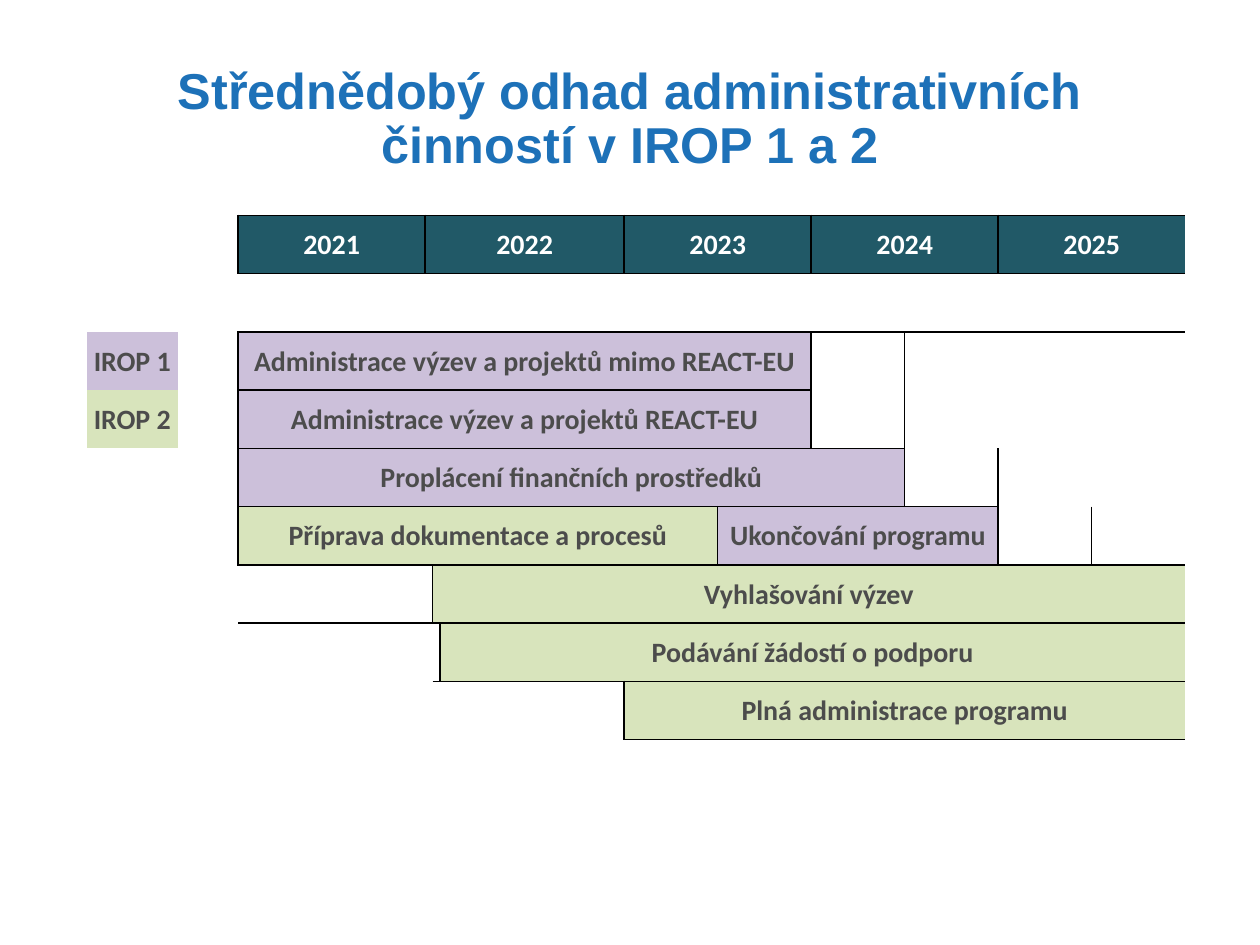
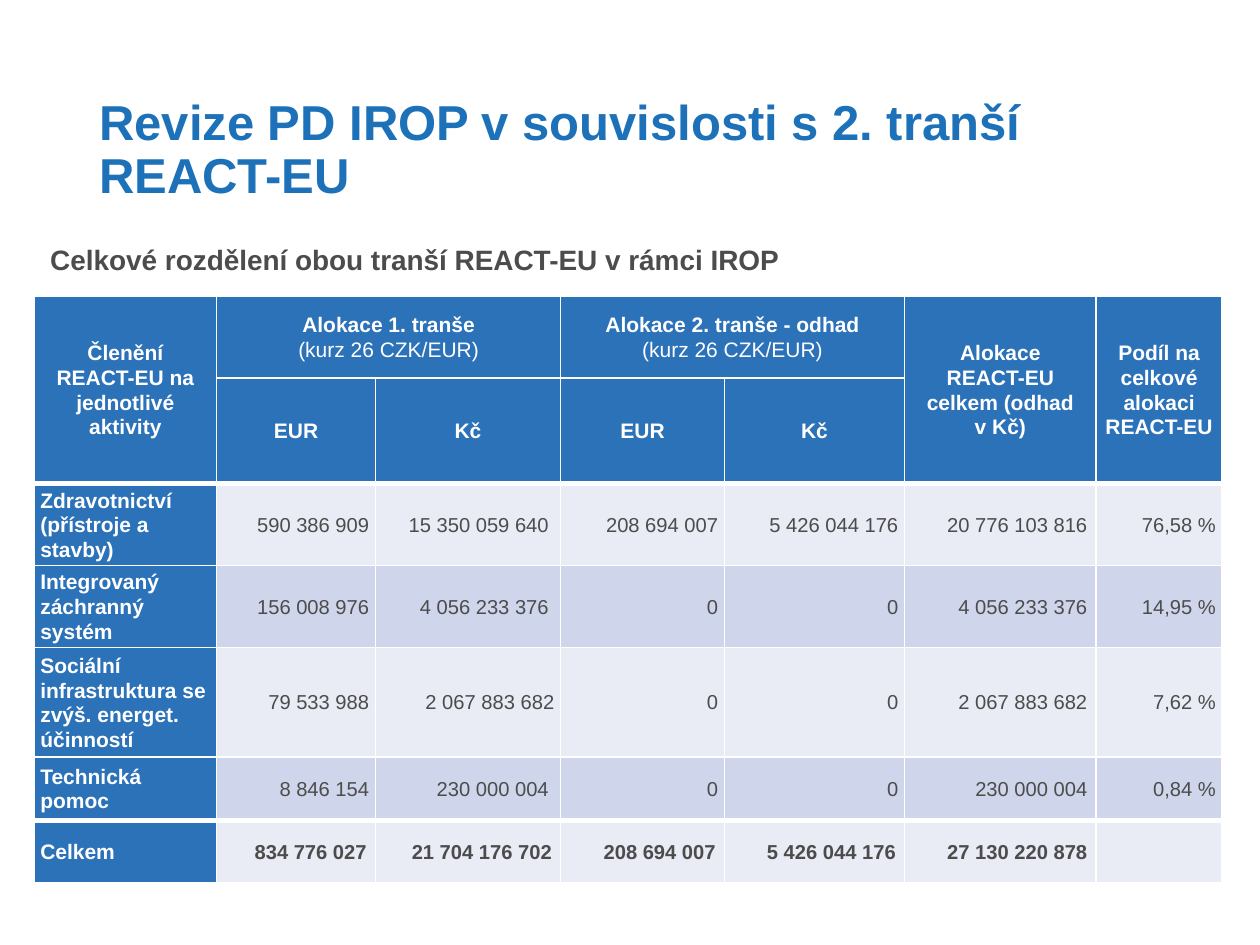
import pptx
import pptx.dml.color
import pptx.enum.text
import pptx.oxml
import pptx.oxml.ns
import pptx.util
from pptx.util import Inches

RGB = pptx.dml.color.RGBColor
ALIGN = pptx.enum.text.PP_ALIGN
MIDDLE = pptx.enum.text.MSO_ANCHOR.MIDDLE

TITLE_BLUE = RGB(0x1D, 0x71, 0xB8)
HEADER_BLUE = RGB(0x2C, 0x72, 0xB9)
TEAL = RGB(0x21, 0x59, 0x67)
PURPLE = RGB(0xCC, 0xC0, 0xDA)
GREEN = RGB(0xD8, 0xE4, 0xBC)
BAND_LIGHT = RGB(0xE9, 0xEB, 0xF5)
BAND_DARK = RGB(0xCF, 0xD5, 0xEA)
GREY = RGB(0x4C, 0x4C, 0x4C)
WHITE = RGB(0xFF, 0xFF, 0xFF)
BLACK = RGB(0x00, 0x00, 0x00)

NO_STYLE = "{2D5ABB26-0587-4C30-8999-92F81FD0307C}"
SIDES = ["L", "R", "T", "B"]

# first column, columns spanned, text
YEARS = [(2, 2, "2021"), (4, 4, "2022"), (8, 2, "2023"), (10, 2, "2024"), (12, 2, "2025")]
LEGEND = [(2, "IROP 1", PURPLE), (3, "IROP 2", GREEN)]
# row, first column, columns spanned, text, colour
ACTIVITIES = [
    (2, 2, 8, "Administrace výzev a projektů mimo REACT-EU", PURPLE),
    (3, 2, 8, "Administrace výzev a projektů REACT-EU", PURPLE),
    (4, 2, 9, "Proplácení finančních prostředků", PURPLE),
    (5, 2, 7, "Příprava dokumentace a procesů", GREEN),
    (5, 9, 3, "Ukončování programu", PURPLE),
    (6, 5, 9, "Vyhlašování výzev", GREEN),
    (7, 6, 8, "Podávání žádostí o podporu", GREEN),
    (8, 8, 6, "Plná administrace programu", GREEN),
]

RATE = "(kurz 26 CZK/EUR)"
# row, column, rows spanned, columns spanned, lines
HEADERS = [
    (0, 0, 2, 1, ["Členění", "REACT-EU na jednotlivé aktivity"]),
    (0, 1, 1, 2, ["Alokace 1. tranše", RATE]),
    (0, 3, 1, 2, ["Alokace 2. tranše - odhad", RATE]),
    (0, 5, 2, 1, ["Alokace", "REACT-EU celkem (odhad", "v Kč)"]),
    (0, 6, 2, 1, ["Podíl na celkové alokaci REACT-EU"]),
    (1, 1, 1, 1, ["EUR"]),
    (1, 2, 1, 1, ["Kč"]),
    (1, 3, 1, 1, ["EUR"]),
    (1, 4, 1, 1, ["Kč"]),
]
ALLOCATIONS = [
    ["Zdravotnictví\v(přístroje a stavby)", "590 386 909", "15 350 059 640 ",
     "208 694 007", "5 426 044 176", "20 776 103 816", "76,58 %"],
    ["Integrovaný záchranný systém", "156 008 976", "4 056 233 376 ",
     "0", "0", "4 056 233 376", "14,95 %"],
    ["Sociální infrastruktura se zvýš. energet. účinností", "79 533 988", "2 067 883 682",
     "0", "0", "2 067 883 682", "7,62 %"],
    ["Technická pomoc", "8 846 154", "230 000 004 ", "0", "0", "230 000 004", "0,84 %"],
    ["Celkem", "834 776 027", "21 704 176 702", "208 694 007", "5 426 044 176",
     "27 130 220 878", ""],
]


def style_paragraph(p, size, color, bold=True, font="Arial", align=ALIGN.LEFT, spacing=None):
    p.alignment = align
    if spacing:
        p.line_spacing = spacing
    p.font.name = font
    p.font.size = pptx.util.Pt(size)
    p.font.bold = bold
    p.font.color.rgb = color


def add_text(slide, box, text, size, color, **style):
    sp = slide.shapes.add_textbox(*map(Inches, box))
    tf = sp.text_frame
    tf.word_wrap = True
    tf.text = text
    style_paragraph(tf.paragraphs[0], size, color, **style)
    return tf


def add_title(slide, box, text, size, align):
    tf = add_text(slide, box, text, size, TITLE_BLUE, align=align, spacing=0.9)
    tf.vertical_anchor = MIDDLE


def add_plain_table(slide, box, cols, rows):
    """Add a table with no style, no fills and no borders."""
    table = slide.shapes.add_table(len(rows), len(cols), *map(Inches, box)).table
    table.first_row = table.horz_banding = False
    table._tbl.tblPr.find(pptx.oxml.ns.qn("a:tableStyleId")).text = NO_STYLE
    for col, width in zip(table.columns, cols):
        col.width = Inches(width)
    for row, height in zip(table.rows, rows):
        row.height = Inches(height)
    for cell in table.iter_cells():
        cell.fill.background()
        set_margins(cell, 0.01, 0.01)
    return table


def set_margins(cell, side, top):
    cell.margin_left = cell.margin_right = Inches(side)
    cell.margin_top = Inches(top)
    cell.margin_bottom = 0


def set_border(cell, side, color, width):
    tcPr = cell._tc.get_or_add_tcPr()
    tags = [pptx.oxml.ns.qn(f"a:ln{s}") for s in SIDES]
    order = SIDES.index(side)
    old = tcPr.find(tags[order])
    if old is not None:
        tcPr.remove(old)
    ln = pptx.oxml.parse_xml(
        f'<a:ln{side} {pptx.oxml.ns.nsdecls("a")} w="{pptx.util.Pt(width)}">'
        f'<a:solidFill><a:srgbClr val="{color}"/></a:solidFill></a:ln{side}>')
    tcPr.insert(sum(child.tag in tags[:order] for child in tcPr), ln)


def outline(table, row, col, span, color, width):
    """Frame a one-row span, setting the touching edges of its neighbours too."""
    last = col + span - 1
    edges = [(row, col, "L", 0, -1, "R"), (row, last, "R", 0, 1, "L")]
    for c in range(col, last + 1):
        edges += [(row, c, "T", -1, 0, "B"), (row, c, "B", 1, 0, "T")]
    for r, c, side, dr, dc, opposite in edges:
        set_border(table.cell(r, c), side, color, width)
        if 0 <= r + dr < len(table.rows) and 0 <= c + dc < len(table.columns):
            set_border(table.cell(r + dr, c + dc), opposite, color, width)


def merge(table, row, col, rows, cols):
    cell = table.cell(row, col)
    if rows * cols > 1:
        cell.merge(table.cell(row + rows - 1, col + cols - 1))
    return cell


def fill_cell(cell, lines, fill, size, color, **style):
    cell.fill.solid()
    cell.fill.fore_color.rgb = fill
    cell.vertical_anchor = MIDDLE
    cell.text = "\n".join(lines)
    for p in cell.text_frame.paragraphs:
        style_paragraph(p, size, color, **style)


def add_timeline(slide, box):
    half_year = (box[2] - 2.01) / 9
    cols = [0.72, 0.48] + [half_year] * 2 + [0.04, 0.05, 0.72] + [half_year] * 7
    table = add_plain_table(slide, box, cols, [box[3] / 9] * 9)
    style = dict(size=16, font="Calibri", align=ALIGN.CENTER)
    for row, text, fill in LEGEND:
        fill_cell(table.cell(row, 0), [text], fill, color=GREY, **style)
    bars = [(0, *year, TEAL) for year in YEARS] + ACTIVITIES
    for row, col, span, text, fill in bars:
        cell = merge(table, row, col, 1, span)
        fill_cell(cell, [text], fill, color=WHITE if fill == TEAL else GREY, **style)
        outline(table, row, col, span, BLACK, 1)


def add_allocations(slide, box):
    cols = [1.45, 1.26, 1.47, 1.3, 1.43, 1.52, 1]
    rows = [0.65, 0.77, 0.65, 0.65, 0.87, 0.5, 0.5]
    table = add_plain_table(slide, box, cols, rows)
    thick_below = (1, 5)
    for r in range(len(rows)):
        for c in range(len(cols)):
            cell = table.cell(r, c)
            wide = c == 5 or (r == 6 and c > 0)
            set_margins(cell, 0.07 if wide else 0.05, 0)
            set_border(cell, "L", WHITE, 1)
            set_border(cell, "R", WHITE, 1)
            set_border(cell, "T", WHITE, 3 if r - 1 in thick_below else 1)
            set_border(cell, "B", WHITE, 3 if r in thick_below else 1)

    for row, col, row_span, col_span, lines in HEADERS:
        cell = merge(table, row, col, row_span, col_span)
        fill_cell(cell, lines, HEADER_BLUE, 12, WHITE, align=ALIGN.CENTER, spacing=1.05)
        for p in cell.text_frame.paragraphs:
            p.font.bold = p.text != RATE

    for r, (activity, *values) in enumerate(ALLOCATIONS, 2):
        fill_cell(table.cell(r, 0), [activity], HEADER_BLUE, 12, WHITE, spacing=1.05)
        band = BAND_DARK if r % 2 else BAND_LIGHT
        for c, value in enumerate(values, 1):
            fill_cell(table.cell(r, c), [value], band, 11.5, GREY, bold=activity == "Celkem",
                      align=ALIGN.RIGHT, spacing=1.05)


def build_timeline_slide(slide):
    add_title(slide, (0.69, 0.49, 8.62, 0.93),
              "Střednědobý odhad administrativních činností v IROP 1 a 2", 28.8, ALIGN.CENTER)
    add_timeline(slide, (0.69, 1.71, 8.69, 4.16))


def build_allocation_slide(slide):
    add_title(slide, (0.69, 0.4, 8.6, 1.6),
              "Revize PD IROP v souvislosti s 2. tranší REACT-EU", 28, ALIGN.LEFT)
    add_text(slide, (0.3, 1.88, 8.6, 0.4),
             "Celkové rozdělení obou tranší REACT-EU v rámci IROP", 16, GREY)
    add_allocations(slide, (0.27, 2.35, 9.43, 4.59))


def main():
    prs = pptx.Presentation()
    prs.slide_width, prs.slide_height = Inches(10), Inches(7.5)
    for build in (build_timeline_slide, build_allocation_slide):
        build(prs.slides.add_slide(prs.slide_layouts[6]))
    prs.save("out.pptx")


if __name__ == "__main__":
    main()
